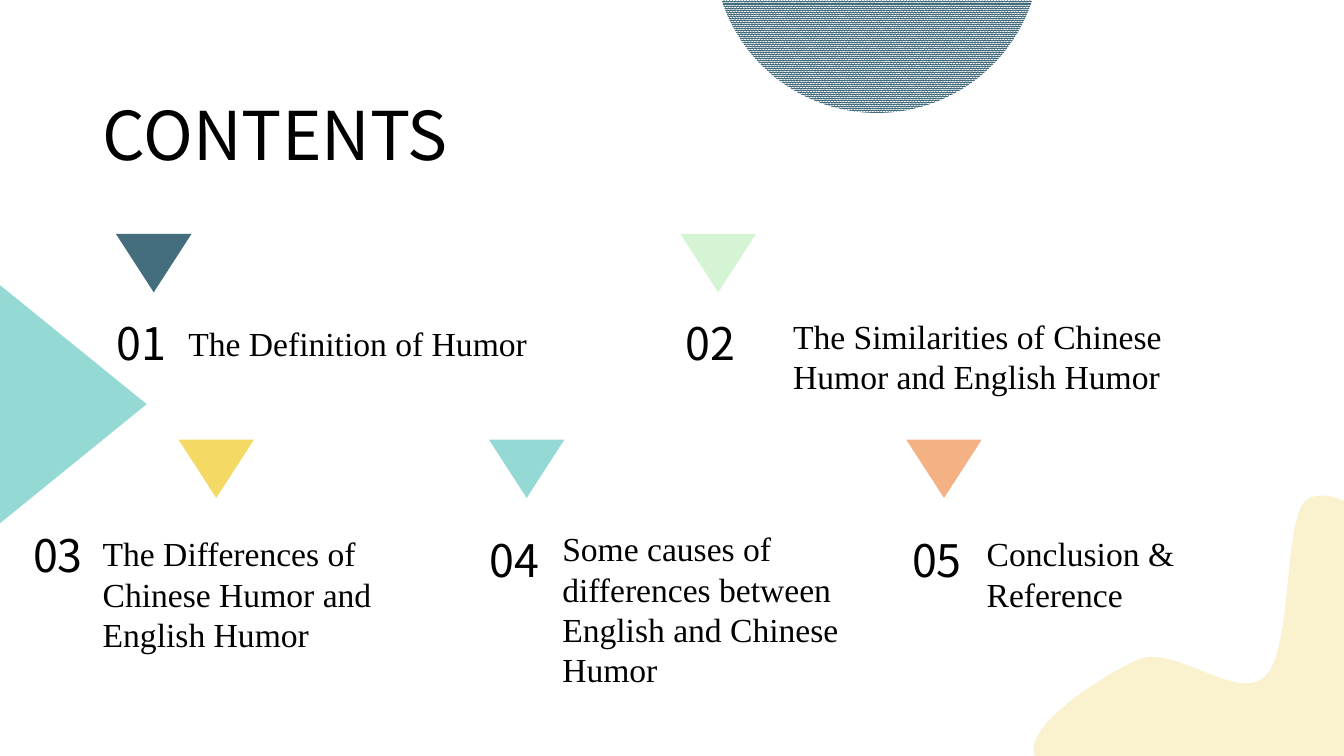
from dataclasses import dataclass

from lxml import etree
from pptx import Presentation
from pptx.dml.color import RGBColor
from pptx.enum.dml import MSO_PATTERN
from pptx.enum.shapes import MSO_SHAPE
from pptx.enum.text import MSO_ANCHOR, MSO_AUTO_SIZE, PP_ALIGN
from pptx.oxml.ns import qn
from pptx.util import Pt

TRIANGLE = MSO_SHAPE.ISOSCELES_TRIANGLE
OVAL = MSO_SHAPE.OVAL
DENSE = MSO_PATTERN.PERCENT_90
TOP = MSO_ANCHOR.TOP
LEFT = PP_ALIGN.LEFT
GROW = MSO_AUTO_SIZE.SHAPE_TO_FIT_TEXT

PX = 9144  # 100 px to the inch
SLIDE_HEIGHT = 750 * PX
SLIDE_WIDTH = SLIDE_HEIGHT * 16 // 9
TITLE_ONLY = 5


@dataclass(frozen=True)
class Theme:
    ink: str = "000000"
    paper: str = "FFFFFF"
    slate: str = "446E7E"
    mint: str = "D5F4D3"
    yellow: str = "F4D964"
    teal: str = "94D9D4"
    orange: str = "F4B183"
    cream: str = "FAF1CE"
    sans: str = "Noto Sans CJK SC"
    serif: str = "Times New Roman"
    title_size: int = 48
    number_size: int = 32
    caption_size: int = 24


@dataclass(frozen=True)
class Box:
    left: int
    top: int
    width: int
    height: int

    def emu(self) -> tuple[int, ...]:
        return tuple(side * PX for side in (self.left, self.top, self.width, self.height))


@dataclass(frozen=True)
class Entry:
    caption: str
    color: str
    marker: tuple[int, int]
    number: tuple[int, int]
    caption_box: Box


THEME = Theme()
ROW_1, ROW_2 = 232, 436

ENTRIES = (
    Entry("The Definition of Humor", THEME.slate,
          (115, ROW_1), (106, 308), Box(177, 315, 455, 50)),
    Entry("The Similarities of Chinese Humor and English Humor", THEME.mint,
          (675, ROW_1), (670, 308), Box(777, 308, 478, 91)),
    Entry("The Differences of Chinese Humor and English Humor", THEME.yellow,
          (177, ROW_2), (23, 519), Box(92, 524, 338, 131)),
    Entry("Some causes of differences between English and Chinese Humor", THEME.teal,
          (485, ROW_2), (476, 524), Box(548, 519, 330, 172)),
    Entry("Conclusion & Reference", THEME.orange,
          (899, ROW_2), (895, 524), Box(969, 524, 330, 91)),
)

BLOB_BOX = Box(1025, 492, 386, 328)
BLOB_START = (1035, 759)
BLOB_CURVES = (
    ((994, 733), (1094, 669), (1130, 654)),
    ((1167, 640), (1228, 697), (1255, 671)),
    ((1283, 645), (1273, 514), (1296, 496)),
    ((1319, 479), (1381, 514), (1394, 566)),
    ((1407, 619), (1434, 777), (1374, 810)),
    ((1314, 842), (1075, 785), BLOB_START),
)


def set_all(target, values: dict) -> None:
    for name, value in values.items():
        setattr(target, name, value)


def place(shape, box: Box) -> None:
    set_all(shape, dict(zip(("left", "top", "width", "height"), box.emu())))


def write(shape, text: str, font: str, size: int) -> None:
    frame = shape.text_frame
    set_all(frame, {"word_wrap": True, "auto_size": GROW, "vertical_anchor": TOP})
    para = frame.paragraphs[0]
    para.alignment = LEFT
    span = para.add_run()
    span.text = text
    set_all(span.font, {"name": font, "size": Pt(size)})
    span.font.color.rgb = RGBColor.from_string(THEME.ink)


def add_text(slide, box: Box, text: str, font: str, size: int) -> None:
    write(slide.shapes.add_textbox(*box.emu()), text, font, size)


def paint(shape, color: str) -> None:
    shape.shadow.inherit = False
    shape.line.fill.background()
    shape.fill.solid()
    shape.fill.fore_color.rgb = RGBColor.from_string(color)


def add_triangle(slide, box: Box, color: str, rotation: int) -> None:
    triangle = slide.shapes.add_shape(TRIANGLE, *box.emu())
    triangle.rotation = rotation
    paint(triangle, color)


def add_title(slide) -> None:
    title = slide.shapes.title
    place(title, Box(92, 88, 393, 91))
    write(title, "CONTENTS", THEME.sans, THEME.title_size)


def add_entry(slide, number: int, entry: Entry) -> None:
    add_triangle(slide, Box(*entry.marker, 75, 58), entry.color, 180)
    add_text(slide, Box(*entry.number, 83, 64), f"{number:02}", THEME.sans, THEME.number_size)
    add_text(slide, entry.caption_box, entry.caption, THEME.serif, THEME.caption_size)


def add_point(parent, x: int, y: int) -> None:
    etree.SubElement(parent, qn("a:pt"), x=str((x - BLOB_BOX.left) * PX),
                     y=str((y - BLOB_BOX.top) * PX))


def add_blob(slide) -> None:
    """Build the outline through its anchors, then bend each side into a cubic curve."""
    outline = slide.shapes.build_freeform(*BLOB_START, scale=PX)
    outline.add_line_segments([curve[-1] for curve in BLOB_CURVES], close=True)
    blob = outline.convert_to_shape()
    place(blob, BLOB_BOX)
    paint(blob, THEME.cream)

    track = next(blob.element.iter(qn("a:path")))
    track.set("w", str(BLOB_BOX.width * PX))
    track.set("h", str(BLOB_BOX.height * PX))
    for step in list(track):
        track.remove(step)
    add_point(etree.SubElement(track, qn("a:moveTo")), *BLOB_START)
    for curve in BLOB_CURVES:
        bend = etree.SubElement(track, qn("a:cubicBezTo"))
        for x, y in curve:
            add_point(bend, x, y)
    etree.SubElement(track, qn("a:close"))


def add_hatched_circle(slide) -> None:
    circle = slide.shapes.add_shape(OVAL, *Box(708, -212, 324, 324).emu())
    paint(circle, THEME.slate)
    circle.fill.patterned()
    circle.fill.pattern = DENSE
    circle.fill.fore_color.rgb = RGBColor.from_string(THEME.slate)
    circle.fill.back_color.rgb = RGBColor.from_string(THEME.paper)


def main() -> None:
    deck = Presentation()
    set_all(deck, {"slide_width": SLIDE_WIDTH, "slide_height": SLIDE_HEIGHT})
    slide = deck.slides.add_slide(deck.slide_layouts[TITLE_ONLY])
    add_title(slide)
    add_blob(slide)
    add_hatched_circle(slide)
    add_triangle(slide, Box(-46, 328, 237, 146), THEME.teal, 90)
    for number, entry in enumerate(ENTRIES, start=1):
        add_entry(slide, number, entry)
    deck.save("out.pptx")


if __name__ == "__main__":
    main()
